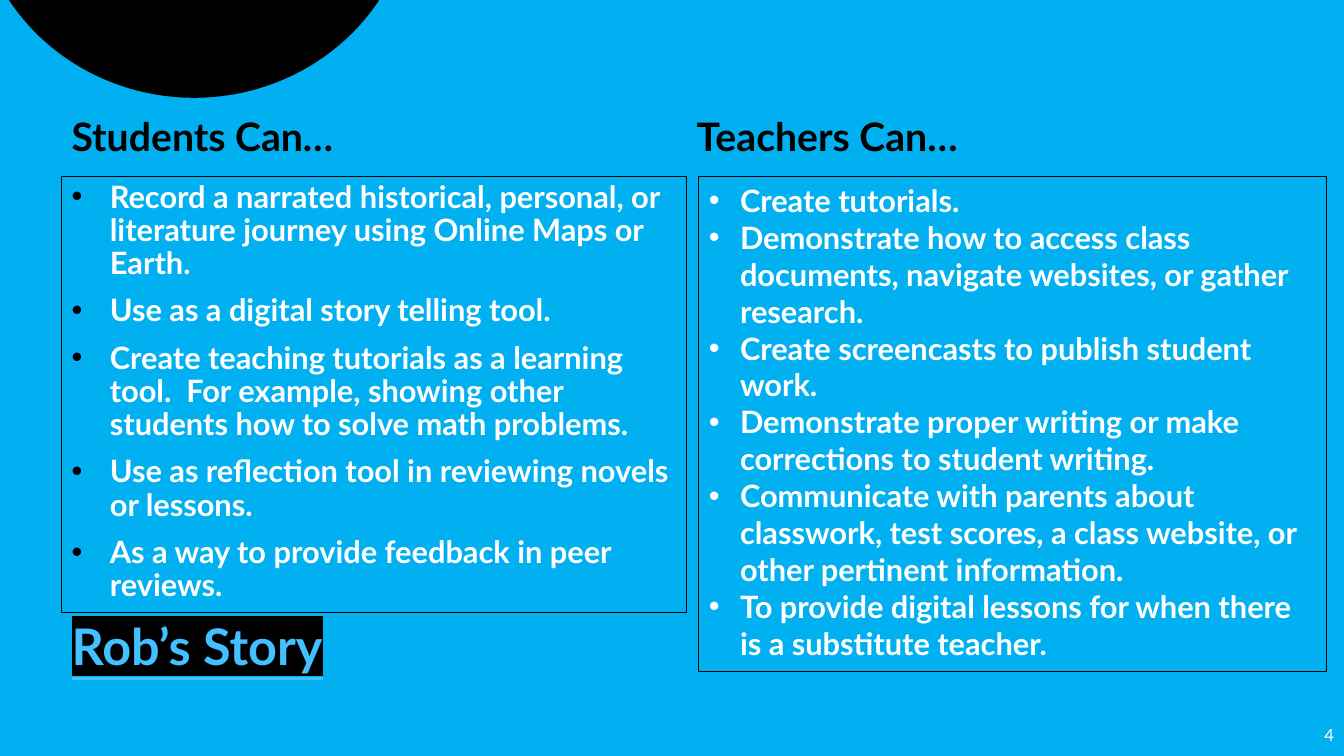
from dataclasses import dataclass
from typing import Optional

from lxml import etree
from pptx import Presentation
from pptx.dml.color import RGBColor
from pptx.enum import shapes, text
from pptx.oxml import ns
from pptx.util import Inches, Pt


@dataclass(frozen=True)
class Theme:
    font: str = "Lato"
    background: str = "00B0F0"
    dark: str = "000000"
    light: str = "FFFFFF"
    link: str = "43C0FF"
    story_size: int = 36
    heading_size: int = 28
    list_size: int = 22
    number_size: int = 12


@dataclass(frozen=True)
class Block:
    """Text of one placeholder or text box; box is left, top, width, height in inches."""
    box: tuple[float, float, float, float]
    lines: tuple[str, ...]
    size: int
    color: str
    placeholder: Optional[int] = None
    bold: bool = True
    underline: bool = False
    highlight: Optional[str] = None
    border: Optional[str] = None
    bullet_color: Optional[str] = None
    indent: float = 0
    line_spacing: float = 1.0
    space_before: int = 0
    alignment: text.PP_ALIGN = text.PP_ALIGN.LEFT
    anchor: text.MSO_ANCHOR = text.MSO_ANCHOR.TOP
    wrap: bool = True


THEME = Theme()
HEADING_TOP, HEADING_HEIGHT, LIST_TOP = 1.06, 0.57, 1.75
STUDENTS_LEFT, STUDENTS_WIDTH = 0.61, 6.2

BLOCKS = (
    Block((STUDENTS_LEFT, 6.12, STUDENTS_WIDTH, 0.65), ("Rob’s Story",),
          THEME.story_size, THEME.link, placeholder=0, underline=True,
          highlight=THEME.dark, line_spacing=0.9, space_before=10),
    Block((STUDENTS_LEFT, HEADING_TOP, 5.3, HEADING_HEIGHT), ("Students Can…",),
          THEME.heading_size, THEME.dark, placeholder=1),
    Block((STUDENTS_LEFT, LIST_TOP, STUDENTS_WIDTH, 4.33), (
        "Record a narrated historical, personal, or literature journey using Online Maps or Earth.",
        "Use as a digital story telling tool.",
        "Create teaching tutorials as a learning tool.  For example, showing other students "
        "how to solve math problems.",
        "Use as reflection tool in reviewing novels or lessons.",
        "As a way to provide feedback in peer reviews.",
    ), THEME.list_size, THEME.light, placeholder=2, border=THEME.dark,
        bullet_color=THEME.dark, indent=0.38, line_spacing=0.9, space_before=10),
    Block((6.81, HEADING_TOP, 4.49, HEADING_HEIGHT), ("Teachers Can…",),
          THEME.heading_size, THEME.dark, placeholder=3),
    Block((6.93, LIST_TOP, 6.23, 4.91), (
        "Create tutorials.",
        "Demonstrate how to access class documents, navigate websites, or gather research.",
        "Create screencasts to publish student work.",
        "Demonstrate proper writing or make corrections to student writing.",
        "Communicate with parents about classwork, test scores, a class website, "
        "or other pertinent information.",
        "To provide digital lessons for when there is a substitute teacher.",
    ), THEME.list_size, THEME.light, placeholder=4, border=THEME.dark,
        bullet_color=THEME.light, indent=0.31),
    Block((12.76, 7.09, 0.57, 0.4), ("4",), THEME.number_size, THEME.light, bold=False,
          alignment=text.PP_ALIGN.RIGHT, anchor=text.MSO_ANCHOR.MIDDLE, wrap=False),
)


def set_attributes(target, values: dict) -> None:
    for name, value in values.items():
        setattr(target, name, value)


def add_bullet(paragraph, color: str, indent: float) -> None:
    properties = paragraph._p.get_or_add_pPr()
    properties.set("marL", str(Inches(indent)))
    properties.set("indent", str(-Inches(indent)))
    bullet_color = etree.SubElement(properties, ns.qn("a:buClr"))
    etree.SubElement(bullet_color, ns.qn("a:srgbClr"), val=color)
    etree.SubElement(properties, ns.qn("a:buFont"), typeface="Arial")
    etree.SubElement(properties, ns.qn("a:buChar"), char="•")


def add_highlight(run, color: str) -> None:
    """Put the highlight right after the fill, where the schema expects it."""
    highlight = etree.Element(ns.qn("a:highlight"))
    etree.SubElement(highlight, ns.qn("a:srgbClr"), val=color)
    run.font._element.find(ns.qn("a:solidFill")).addnext(highlight)


def write_line(paragraph, line: str, block: Block) -> None:
    set_attributes(paragraph, {
        "alignment": block.alignment,
        "line_spacing": block.line_spacing,
        "space_before": Pt(block.space_before),
        "space_after": Pt(0),
    })
    if block.bullet_color:
        add_bullet(paragraph, block.bullet_color, block.indent)
    run = paragraph.add_run()
    run.text = line
    set_attributes(run.font, {
        "name": THEME.font,
        "size": Pt(block.size),
        "bold": block.bold,
        "underline": block.underline,
    })
    run.font.color.rgb = RGBColor.from_string(block.color)
    if block.highlight:
        add_highlight(run, block.highlight)


def add_block(slide, block: Block) -> None:
    left, top, width, height = map(Inches, block.box)
    if block.placeholder is None:
        shape = slide.shapes.add_textbox(left, top, width, height)
    else:
        shape = slide.placeholders[block.placeholder]
        set_attributes(shape, {"left": left, "top": top, "width": width, "height": height})
    if block.border:
        shape.line.color.rgb = RGBColor.from_string(block.border)
        shape.line.width = Pt(0.75)
    frame = shape.text_frame
    set_attributes(frame, {
        "word_wrap": block.wrap,
        "auto_size": text.MSO_AUTO_SIZE.NONE,
        "vertical_anchor": block.anchor,
    })
    for index, line in enumerate(block.lines):
        paragraph = frame.add_paragraph() if index else frame.paragraphs[0]
        write_line(paragraph, line, block)


def add_corner_circle(slide) -> None:
    circle = slide.shapes.add_shape(
        shapes.MSO_SHAPE.OVAL, *map(Inches, (-0.25, -3.21, 4.35, 4.18)))
    circle.shadow.inherit = False
    circle.fill.solid()
    circle.fill.fore_color.rgb = RGBColor.from_string(THEME.dark)
    circle.line.fill.background()


def main() -> None:
    presentation = Presentation()
    presentation.slide_width = Inches(13.33)
    presentation.slide_height = Inches(7.5)
    comparison_layout = presentation.slide_layouts[4]
    slide = presentation.slides.add_slide(comparison_layout)
    slide.background.fill.solid()
    slide.background.fill.fore_color.rgb = RGBColor.from_string(THEME.background)
    add_corner_circle(slide)
    for block in BLOCKS:
        add_block(slide, block)
    presentation.save("out.pptx")


if __name__ == "__main__":
    main()
